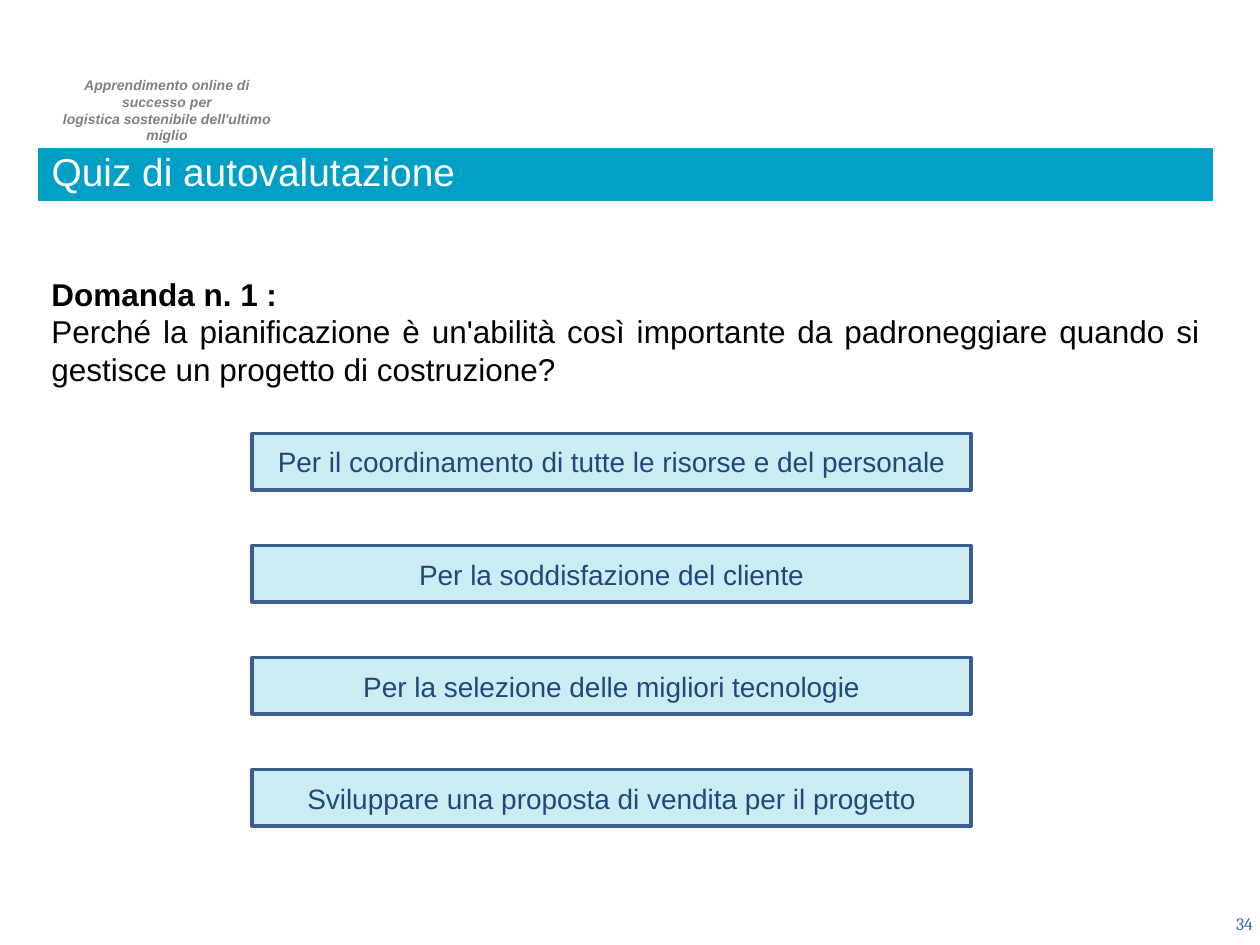
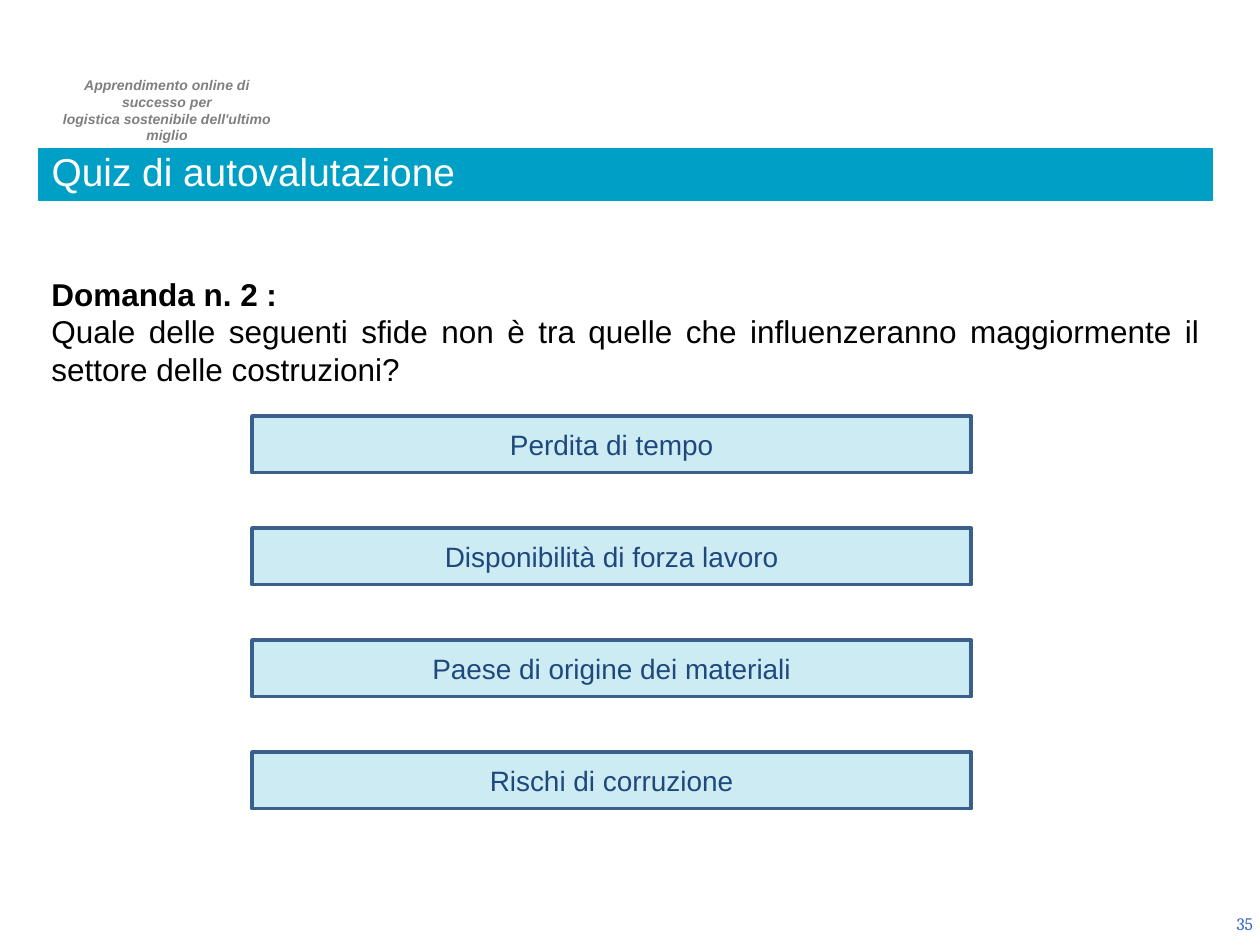
from pptx import Presentation
from pptx.dml.color import RGBColor
from pptx.enum.shapes import MSO_SHAPE as Shape
from pptx.enum.text import MSO_ANCHOR as Anchor, MSO_AUTO_SIZE as AutoSize, PP_ALIGN as Align
from pptx.oxml.ns import qn
from pptx.util import Pt
from lxml.etree import SubElement

COLORS = {
    "band": "009FC6",
    "band_text": "FFFFFF",
    "motto": "7F7F7F",
    "page": "3366CC",
    "question": "000000",
    "answer_line": "3A5F8C",
    "answer_text": "1F497D",
}

# Boxes: left, top, width, height in points
MOTTO_BOX = (20.9, 40.3, 146.2, 26.6)
BAND_BOX = (22.3, 85, 670.3, 29.5)
QUESTION_BOX = (22.3, 153.4, 670.3, 72.7)
PAGE_BOX = (555, 513.4, 168, 28.8)
ANSWER_LEFT, ANSWER_WIDTH, ANSWER_HEIGHT = 144, 411, 32.4
ANSWER_PITCH = 64

FIRST_PAGE = 34
TITLE = "Quiz di autovalutazione"
MOTTO = ["Apprendimento online di successo per", "logistica sostenibile dell'ultimo miglio"]

# Question, top of the answers, answers
QUIZ = [
    ("Perché la pianificazione è un'abilità così importante da padroneggiare "
     "quando si gestisce un progetto di costruzione?", 247.7,
     ["Per il coordinamento di tutte le risorse e del personale",
      "Per la soddisfazione del cliente",
      "Per la selezione delle migliori tecnologie",
      "Sviluppare una proposta di vendita per il progetto"]),
    ("Quale delle seguenti sfide non è tra quelle che influenzeranno "
     "maggiormente il settore delle costruzioni?", 237.7,
     ["Perdita di tempo",
      "Disponibilità di forza lavoro",
      "Paese di origine dei materiali",
      "Rischi di corruzione"]),
]


def rgb(name):
    return RGBColor.from_string(COLORS[name])


def points(box):
    return [Pt(value) for value in box]


def write(frame, text, size, color, font="Arial", bold=False, italic=False,
          align=Align.LEFT, anchor=Anchor.TOP, spacing=None, more=False):
    """Write one paragraph; more=True appends it after the existing ones."""
    frame.word_wrap = True
    frame.auto_size = AutoSize.NONE
    frame.vertical_anchor = anchor
    paragraph = frame.add_paragraph() if more else frame.paragraphs[0]
    paragraph.alignment = align
    paragraph.line_spacing = spacing
    run = paragraph.add_run()
    run.text = text
    run.font.name, run.font.size = font, Pt(size)
    run.font.bold, run.font.italic = bold, italic
    run.font.color.rgb = rgb(color)


def paint(shape, fill, line, width, opacity=100):
    shape.fill.solid()
    shape.fill.fore_color.rgb = rgb(fill)
    shape.line.color.rgb = rgb(line)
    shape.line.width = Pt(width)
    if opacity < 100:
        fill_color = shape.fill._xPr.find(qn("a:solidFill"))[0]
        SubElement(fill_color, qn("a:alpha"), val=str(opacity * 1000))


def add_motto(slide, box):
    frame = slide.shapes.add_textbox(*points(box)).text_frame
    frame.margin_left = Pt(10)
    for index, line in enumerate(MOTTO):
        write(frame, line, 8, "motto", bold=True, italic=True,
              align=Align.CENTER, more=index > 0)


def add_title_band(slide, box):
    band = slide.shapes.title
    band.left, band.top, band.width, band.height = points(box)
    paint(band, "band", "band", 0.75)
    write(band.text_frame, TITLE, 22.2, "band_text", anchor=Anchor.BOTTOM, spacing=0.8)


def add_page_number(slide, box, page):
    frame = slide.shapes.add_textbox(*points(box)).text_frame
    write(frame, str(page), 10, "page", font="Cambria", align=Align.RIGHT, anchor=Anchor.MIDDLE)


def add_question(slide, box, number, question):
    frame = slide.shapes.add_textbox(*points(box)).text_frame
    write(frame, f"Domanda n. {number} :", 18, "question", bold=True)
    write(frame, question, 18, "question", align=Align.JUSTIFY, more=True)


def add_answers(slide, top, answers):
    for row, text in enumerate(answers):
        box = (ANSWER_LEFT, top + row * ANSWER_PITCH, ANSWER_WIDTH, ANSWER_HEIGHT)
        answer = slide.shapes.add_shape(Shape.RECTANGLE, *points(box))
        answer.shadow.inherit = False
        paint(answer, "band", "answer_line", 2, opacity=20)
        write(answer.text_frame, text, 16, "answer_text",
              align=Align.CENTER, anchor=Anchor.MIDDLE)


def add_quiz_slide(deck, number, question, answers_top, answers):
    slide = deck.slides.add_slide(deck.slide_layouts.get_by_name("Title Only"))
    # Shared frame
    add_motto(slide, MOTTO_BOX)
    add_page_number(slide, PAGE_BOX, FIRST_PAGE + number - 1)
    add_title_band(slide, BAND_BOX)
    # Quiz content
    add_question(slide, QUESTION_BOX, number, question)
    add_answers(slide, answers_top, answers)


def main():
    deck = Presentation()
    deck.slide_width, deck.slide_height = Pt(720), Pt(540)
    for number, (question, answers_top, answers) in enumerate(QUIZ, start=1):
        add_quiz_slide(deck, number, question, answers_top, answers)
    deck.save("out.pptx")


if __name__ == "__main__":
    main()
